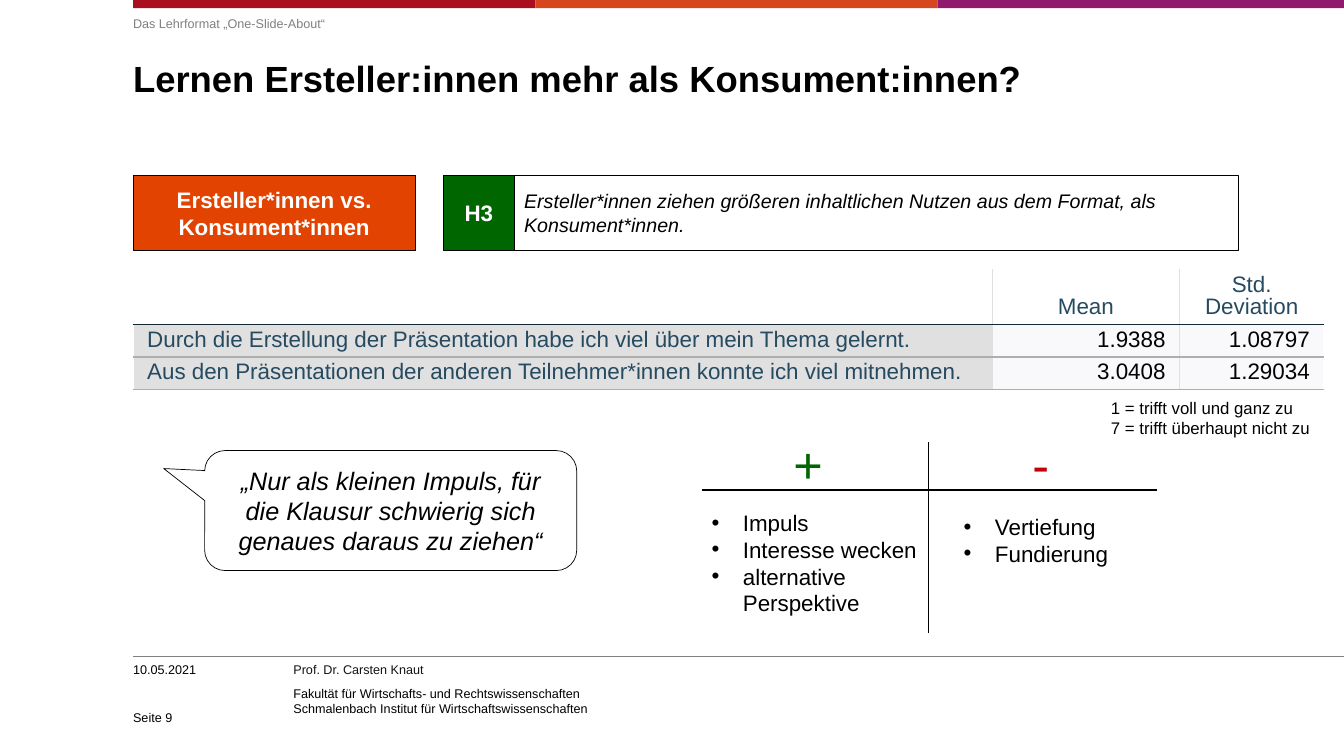
import pptx
import pptx.util
import pptx.dml.color
import pptx.enum.shapes
import pptx.enum.text
import pptx.oxml
import pptx.oxml.ns

Inches, Pt = pptx.util.Inches, pptx.util.Pt
Shape = pptx.enum.shapes.MSO_SHAPE
Align = pptx.enum.text.PP_ALIGN
Anchor = pptx.enum.text.MSO_ANCHOR

COLORS = {
    "black": "000000", "white": "FFFFFF", "gray": "808080", "ink": "141313",
    "crimson": "AA0F1F", "orange": "D7471F", "purple": "901B6E",
    "topic": "E24300", "green": "006600", "red": "C00009",
    "label": "264A60", "value": "010205", "label_fill": "E0E0E0",
    "value_fill": "F9F9FB", "header_rule": "152935", "row_rule": "AEAEAE",
}
MARGIN = 1.32


def rgb(name):
    return pptx.dml.color.RGBColor.from_string(COLORS[name])


def add_run(paragraph, text, size, color="black", bold=False, italic=False):
    for i, line in enumerate(text.split("\n")):
        if i:
            paragraph.add_line_break()
        run = paragraph.add_run()
        run.text = line
        run.font.name = "Arial"
        run.font.size = Pt(size)
        run.font.color.rgb = rgb(color)
        run.font.bold = bold
        run.font.italic = italic


def add_bullet(paragraph):
    props = paragraph._p.get_or_add_pPr()
    props.set("marL", str(Inches(0.31)))
    props.set("indent", str(Inches(-0.31)))
    for tag, key, value in (("buFont", "typeface", "Arial"), ("buChar", "char", "•")):
        pptx.oxml.ns.qn("a:" + tag)
        bullet = props.makeelement(pptx.oxml.ns.qn("a:" + tag), {key: value})
        props.append(bullet)


def add_text(slide, box, lines, size, color="black", inset=True, wrap=True,
             bullets=False, bold=False, after=0, spacing=None, anchor=Anchor.TOP):
    frame = slide.shapes.add_textbox(*map(Inches, box)).text_frame
    frame.word_wrap = wrap
    frame.vertical_anchor = anchor
    if not inset:
        frame.margin_left = frame.margin_right = 0
        frame.margin_top = frame.margin_bottom = 0
    for i, line in enumerate(lines):
        paragraph = frame.add_paragraph() if i else frame.paragraphs[0]
        if bullets:
            add_bullet(paragraph)
        paragraph.space_after = Pt(after)
        if spacing:
            paragraph.line_spacing = Pt(spacing)
        add_run(paragraph, line, size, color, bold)
    return frame


def add_box(slide, box, fill, text="", size=16, color="white", kind=Shape.RECTANGLE,
            align=Align.CENTER, bold=False, italic=False, outlined=True):
    shape = slide.shapes.add_shape(kind, *map(Inches, box))
    shape.shadow.inherit = False
    shape.fill.solid()
    shape.fill.fore_color.rgb = rgb(fill)
    if outlined:
        shape.line.color.rgb = rgb("black")
        shape.line.width = Pt(0.5)
    else:
        shape.line.fill.background()
    if text:
        shape.text_frame.word_wrap = True
        shape.text_frame.vertical_anchor = Anchor.MIDDLE
        paragraph = shape.text_frame.paragraphs[0]
        paragraph.alignment = align
        add_run(paragraph, text, size, color, bold, italic)
    return shape


def add_rule(slide, x1, y1, x2, y2, color="black", width=1):
    rule = slide.shapes.add_connector(
        pptx.enum.shapes.MSO_CONNECTOR.STRAIGHT, *map(Inches, (x1, y1, x2, y2)))
    rule.line.color.rgb = rgb(color)
    rule.line.width = Pt(width)
    rule._element.spPr.append(pptx.oxml.parse_xml(
        f"<a:effectLst {pptx.oxml.ns.nsdecls('a')}/>"))


def set_border(cell, side, color):
    cell._tc.get_or_add_tcPr().append(pptx.oxml.parse_xml(
        f"<a:ln{side} {pptx.oxml.ns.nsdecls('a')} w='12700'><a:solidFill>"
        f"<a:srgbClr val='{COLORS[color]}'/></a:solidFill></a:ln{side}>"))


def add_results(slide):
    rows = [
        ("", "Mean", "Std. Deviation"),
        ("Durch die Erstellung der Präsentation habe ich viel über mein Thema gelernt.",
         "1.9388", "1.08797"),
        ("Aus den Präsentationen der anderen Teilnehmer*innen konnte ich viel mitnehmen.",
         "3.0408", "1.29034"),
    ]
    widths, heights = (8.52, 1.86, 1.43), (0.55, 0.32, 0.32)
    table = slide.shapes.add_table(3, 3, *map(
        Inches, (MARGIN, 2.67, sum(widths), sum(heights)))).table
    table.first_row = table.horz_banding = False
    for column, width in zip(table.columns, widths):
        column.width = Inches(width)
    rules = ("header_rule", "row_rule", "row_rule")
    for r, texts in enumerate(rows):
        table.rows[r].height = Inches(heights[r])
        for c, text in enumerate(texts):
            cell = table.cell(r, c)
            header, label = r == 0, c == 0
            if c > 0:
                set_border(cell, "L", "label_fill")
            if c < 2:
                set_border(cell, "R", "label_fill")
            if r > 0:
                set_border(cell, "T", rules[r - 1])
            set_border(cell, "B", rules[r])
            cell.fill.solid()
            cell.fill.fore_color.rgb = rgb(
                "white" if header else "label_fill" if label else "value_fill")
            cell.vertical_anchor = Anchor.BOTTOM if header else Anchor.TOP
            if not text:
                continue
            paragraph = cell.text_frame.paragraphs[0]
            props = paragraph._p.get_or_add_pPr()
            for key in ("marL", "marR"):
                props.set(key, str(Inches(0.04)))
            paragraph.alignment = (
                Align.CENTER if header else Align.LEFT if label else Align.RIGHT)
            paragraph.line_spacing = Pt(16)
            add_run(paragraph, text, 16, "label" if header or label else "value")


def add_frame(slide):
    # Colour band
    for left, width, color in ((MARGIN, 3.99, "crimson"), (5.31, 3.99, "orange"),
                               (9.3, 4.03, "purple")):
        add_box(slide, (left, 0, width, 0.08), color, outlined=False)
    # Footer
    add_rule(slide, MARGIN, 6.51, 13.33, 6.51, "gray", 0.5)
    author = add_text(slide, (2.91, 6.57, 4.31, 0.6), [
        "Prof. Dr. Carsten Knaut",
        "Fakultät für Wirtschafts- und Rechtswissenschaften\n"
        "Schmalenbach Institut für Wirtschaftswissenschaften",
    ], 9, inset=False, after=6)
    author.paragraphs[0].runs[0].font.color.rgb = rgb("ink")
    add_text(slide, (MARGIN, 6.57, 1.42, 0.2), ["10.05.2021"], 9, inset=False)
    add_text(slide, (MARGIN, 6.96, 1.42, 0.23), ["Seite 9"], 9, inset=False,
             anchor=Anchor.BOTTOM)
    # Headings
    add_text(slide, (MARGIN, 0.57, 11.81, 0.98),
             ["Lernen Ersteller:innen mehr als Konsument:innen?"], 26,
             inset=False, bold=True, spacing=30)
    add_text(slide, (MARGIN, 0.16, 11.8, 0.24), ["Das Lehrformat „One-Slide-About“"],
             9, "gray", inset=False, after=6)


def add_pros_and_cons(slide):
    add_text(slide, (6.96, 5, 2.25, 1.18),
             ["Impuls", "Interesse wecken", "alternative Perspektive"], 16, bullets=True)
    add_text(slide, (9.46, 5.04, 2.02, 0.64), ["Vertiefung", "Fundierung"], 16,
             bullets=True)
    add_text(slide, (7.77, 4.25, 0.5, 0.71), ["+"], 36, "green", wrap=False)
    add_text(slide, (10.14, 4.25, 0.37, 0.71), ["-"], 36, "red", wrap=False)
    add_rule(slide, 6.96, 4.86, 11.48, 4.86)
    add_rule(slide, 9.21, 4.39, 9.21, 6.28)


def main():
    deck = pptx.Presentation()
    deck.slide_width, deck.slide_height = Inches(13.33), Inches(7.5)
    slide = deck.slides.add_slide(deck.slide_layouts[6])
    add_frame(slide)

    # Hypothesis
    add_box(slide, (MARGIN, 1.74, 2.8, 0.74), "topic",
            "Ersteller*innen vs. Konsument*innen", bold=True)
    add_box(slide, (5.1, 1.74, 7.18, 0.74), "white",
            "Ersteller*innen ziehen größeren inhaltlichen Nutzen aus dem Format, "
            "als Konsument*innen.", 14, "black", align=Align.LEFT, italic=True)
    add_box(slide, (4.4, 1.74, 0.7, 0.74), "green", "H3", bold=True)

    # Survey results and scale
    add_results(slide)
    add_text(slide, (10.92, 3.9, 2.19, 0.5),
             ["1 = trifft voll und ganz zu", "7 = trifft überhaupt nicht zu"], 12,
             wrap=False)

    # Quote
    quote = add_box(slide, (2.03, 4.47, 3.69, 1.19), "white",
                    "„Nur als kleinen Impuls, für die Klausur schwierig sich "
                    "genaues daraus zu ziehen“", 18, "black",
                    Shape.ROUNDED_RECTANGULAR_CALLOUT, italic=True)
    for i, value in enumerate((-0.61, -0.35, 0.17)):
        quote.adjustments[i] = value

    add_pros_and_cons(slide)
    deck.save("out.pptx")


if __name__ == "__main__":
    main()
